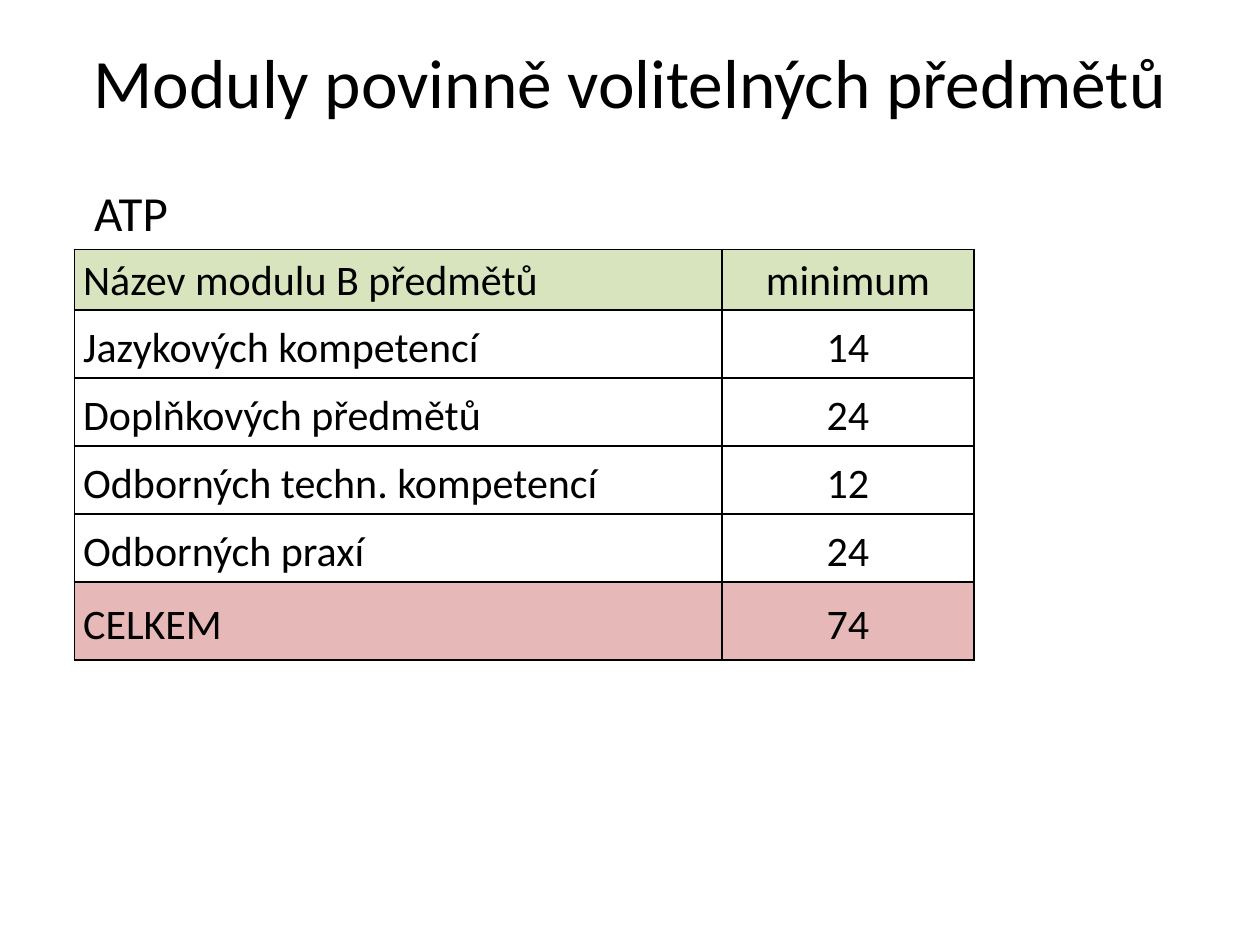
from dataclasses import dataclass
from lxml.etree import SubElement
from pptx import Presentation
from pptx.dml.color import RGBColor as RGB
from pptx.enum.text import MSO_ANCHOR as Anchor, PP_ALIGN as Align
from pptx.oxml.ns import qn
from pptx.util import Inches, Pt


@dataclass
class Theme:
    font: str = "Calibri"
    ink: str = "000000"
    head: str = "D7E4BD"
    total: str = "E6B9B8"
    title: float = 39.6
    label: float = 28
    body: float = 24


theme = Theme()


def style(para, size, align):
    para.alignment = align
    for run in para.runs:
        run.font.name = theme.font
        run.font.size = Pt(size)
        run.font.color.rgb = RGB.from_string(theme.ink)


def border(cell, shown):
    props = cell._tc.get_or_add_tcPr()
    for side in ("L", "R", "T", "B"):
        line = SubElement(props, qn(f"a:ln{side}"), w=str(Pt(1)))
        if side in shown:
            fill = SubElement(line, qn("a:solidFill"))
            SubElement(fill, qn("a:srgbClr"), val=theme.ink)
        else:
            SubElement(line, qn("a:noFill"))


prs = Presentation()
prs.slide_width, prs.slide_height = Inches(10), Inches(7.5)
slide = prs.slides.add_slide(prs.slide_layouts[5])

title = slide.shapes.title
title.left, title.top = Inches(0.5), Inches(0.22)
title.width, title.height = Inches(9), Inches(0.85)
title.text_frame.text = "Moduly povinně volitelných předmětů"
title.text_frame.vertical_anchor = Anchor.MIDDLE
style(title.text_frame.paragraphs[0], theme.title, Align.CENTER)

rows = [
    (" ATP", ""),
    ("Název modulu B předmětů", "minimum"),
    ("Jazykových kompetencí", "14"),
    ("Doplňkových předmětů", "24"),
    ("Odborných techn. kompetencí", "12"),
    ("Odborných praxí", "24"),
    ("CELKEM", "74"),
]
highs = [0.59, 0.48] + [0.54] * 4 + [0.62]
wides = [5.14, 2]
fills = {1: theme.head, len(rows) - 1: theme.total}

frame = slide.shapes.add_table(
    len(rows), len(wides), Inches(0.59), Inches(1.39),
    Inches(sum(wides)), Inches(sum(highs)))
table = frame.table
table.first_row = table.horz_banding = False
for col, wide in zip(table.columns, wides):
    col.width = Inches(wide)
for row, high in zip(table.rows, highs):
    row.height = Inches(high)

for r, texts in enumerate(rows):
    for c, text in enumerate(texts):
        cell = table.cell(r, c)
        cell.text_frame.text = text
        cell.vertical_anchor = Anchor.MIDDLE
        cell.margin_left = cell.margin_right = Inches(0.07)
        cell.margin_top = cell.margin_bottom = 0
        para = cell.text_frame.paragraphs[0]
        para.line_spacing = 1.07 if r < 2 else 1.15
        para.space_before = para.space_after = Pt(3 if r < 2 else 0)
        style(para, theme.body if r else theme.label,
              Align.CENTER if c else Align.LEFT)
        border(cell, "LRTB" if r else "B")
        if r in fills:
            cell.fill.solid()
            cell.fill.fore_color.rgb = RGB.from_string(fills[r])
        else:
            cell.fill.background()
table.cell(0, 0).merge(table.cell(0, 1))

prs.save("out.pptx")
